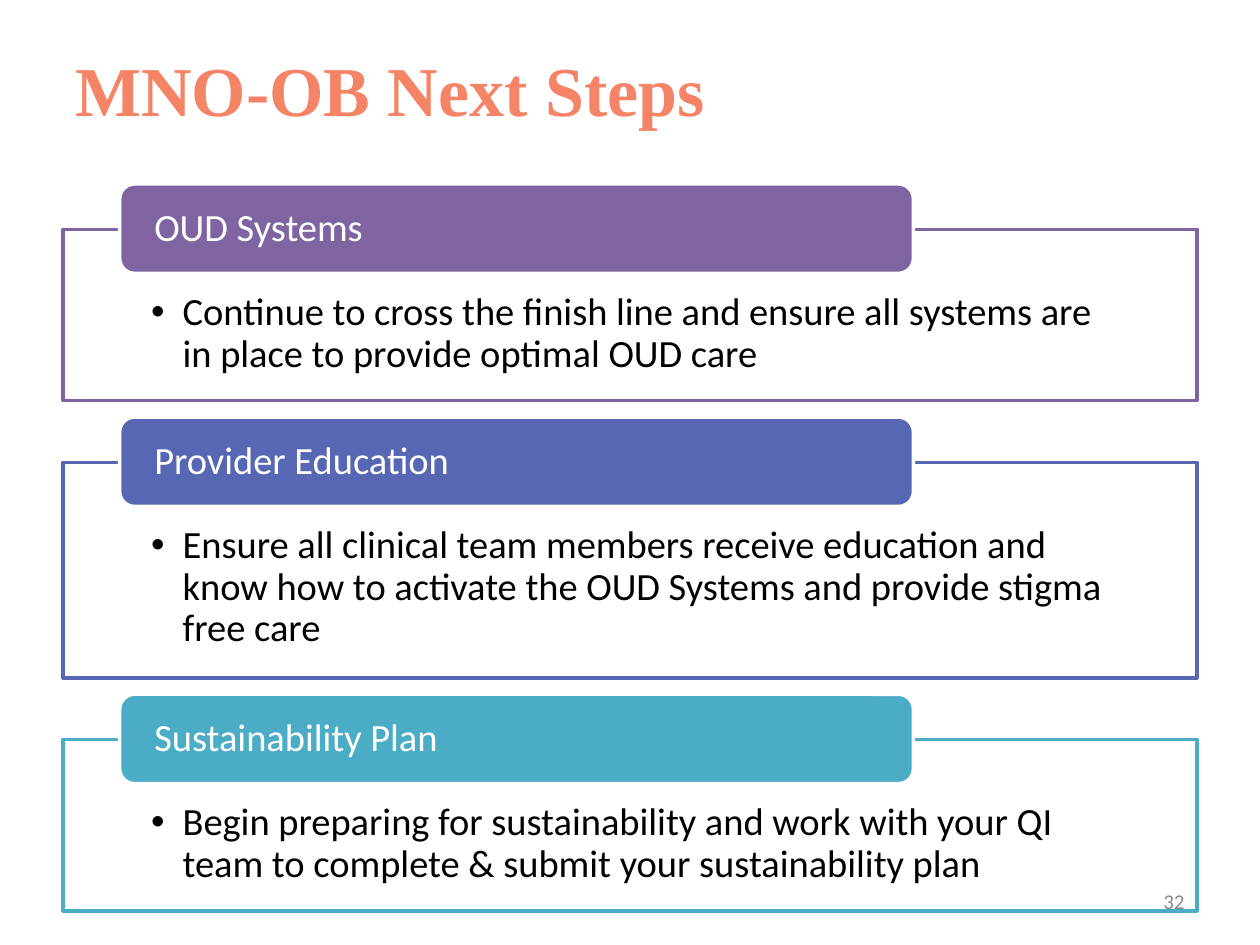
from dataclasses import dataclass

import lxml.etree
import pptx
import pptx.dml.color
import pptx.enum.shapes
import pptx.enum.text
import pptx.oxml.ns
import pptx.util

Inches = pptx.util.Inches
Align = pptx.enum.text.PP_ALIGN
Anchor = pptx.enum.text.MSO_ANCHOR
ShapeKind = pptx.enum.shapes.MSO_SHAPE


@dataclass(frozen=True)
class Theme:
    title_font: str = "Times New Roman"
    body_font: str = "Calibri"
    title_size: int = 40
    body_size: int = 22
    number_size: int = 12
    line_width: int = 2
    title_color: str = "F58466"
    text_color: str = "000000"
    number_color: str = "898989"
    white: str = "FFFFFF"


@dataclass(frozen=True)
class Step:
    label: str
    detail: str
    color: str
    panel_height: float


@dataclass(frozen=True)
class TextStyle:
    font: str
    size: int
    color: str
    bold: bool = False
    align: Align = Align.LEFT
    anchor: Anchor = Anchor.MIDDLE
    margins: tuple[float, float, float, float] = (0.1, 0.05, 0.1, 0.05)
    line_spacing: float = 1.0


THEME = Theme()
TITLE_STYLE = TextStyle(THEME.title_font, THEME.title_size, THEME.title_color, bold=True)
NUMBER_STYLE = TextStyle(
    THEME.body_font, THEME.number_size, THEME.number_color, align=Align.RIGHT
)
LABEL_STYLE = TextStyle(
    THEME.body_font, THEME.body_size, THEME.white,
    margins=(0.24, 0, 0.24, 0), line_spacing=0.9,
)
DETAIL_STYLE = TextStyle(
    THEME.body_font, THEME.body_size, THEME.text_color,
    anchor=Anchor.TOP, margins=(0.7, 0.5, 0.7, 0.17), line_spacing=0.9,
)

STEPS = [
    Step(
        "OUD Systems",
        "Continue to cross the finish line and ensure all systems are in place "
        "to provide optimal OUD care",
        "8064A2", 1.36,
    ),
    Step(
        "Provider Education",
        "Ensure all clinical team members receive education and know how to "
        "activate the OUD Systems and provide stigma free care",
        "5767B4", 1.71,
    ),
    Step(
        "Sustainability Plan",
        "Begin preparing for sustainability and work with your QI team to "
        "complete & submit your sustainability plan",
        "4BACC6", 1.36,
    ),
]
FIRST_TOP = 1.46
LABEL_HEIGHT = 0.71
LABEL_OVERHANG = 0.36
STEP_GAP = 0.13


def rgb(color: str) -> pptx.dml.color.RGBColor:
    return pptx.dml.color.RGBColor.from_string(color)


def add_bullet(paragraph) -> None:
    properties = paragraph._p.get_or_add_pPr()
    properties.set("marL", str(Inches(0.25)))
    properties.set("indent", str(Inches(-0.25)))
    for tag, name, value in (("a:buFont", "typeface", "Arial"), ("a:buChar", "char", "•")):
        element = lxml.etree.SubElement(properties, pptx.oxml.ns.qn(tag))
        element.set(name, value)


def write_text(shape, text: str, style: TextStyle, bulleted: bool = False) -> None:
    frame = shape.text_frame
    frame.text = text
    frame.word_wrap = True
    frame.vertical_anchor = style.anchor
    left, top, right, bottom = style.margins
    frame.margin_left, frame.margin_top = Inches(left), Inches(top)
    frame.margin_right, frame.margin_bottom = Inches(right), Inches(bottom)
    paragraph = frame.paragraphs[0]
    if bulleted:
        add_bullet(paragraph)
    paragraph.alignment = style.align
    paragraph.line_spacing = style.line_spacing
    font = paragraph.runs[0].font
    font.name = style.font
    font.size = pptx.util.Pt(style.size)
    font.bold = style.bold
    font.color.rgb = rgb(style.color)


def add_text_box(
    slide, text: str, style: TextStyle,
    left: float, top: float, width: float, height: float,
) -> None:
    box = slide.shapes.add_textbox(Inches(left), Inches(top), Inches(width), Inches(height))
    write_text(box, text, style)


def add_block(
    slide, kind: ShapeKind, fill: str, line: str,
    left: float, top: float, width: float, height: float,
):
    shape = slide.shapes.add_shape(
        kind, Inches(left), Inches(top), Inches(width), Inches(height)
    )
    shape.shadow.inherit = False
    shape.fill.solid()
    shape.fill.fore_color.rgb = rgb(fill)
    shape.line.color.rgb = rgb(line)
    shape.line.width = pptx.util.Pt(THEME.line_width)
    return shape


def add_step(slide, step: Step, top: float) -> float:
    panel_top = top + LABEL_OVERHANG
    panel = add_block(
        slide, ShapeKind.RECTANGLE, THEME.white, step.color,
        0.5, panel_top, 9, step.panel_height,
    )
    write_text(panel, step.detail, DETAIL_STYLE, bulleted=True)
    label = add_block(
        slide, ShapeKind.ROUNDED_RECTANGLE, step.color, THEME.white,
        0.95, top, 6.3, LABEL_HEIGHT,
    )
    write_text(label, step.label, LABEL_STYLE)
    return panel_top + step.panel_height + STEP_GAP


def main() -> None:
    presentation = pptx.Presentation()
    presentation.slide_width = Inches(10)
    presentation.slide_height = Inches(7.5)
    slide = presentation.slides.add_slide(presentation.slide_layouts[6])
    add_text_box(slide, "MNO-OB Next Steps", TITLE_STYLE, 0.5, 0.08, 9, 1.25)
    top = FIRST_TOP
    for step in STEPS:
        top = add_step(slide, step, top)
    add_text_box(slide, "32", NUMBER_STYLE, 7.17, 6.95, 2.33, 0.4)
    presentation.save("out.pptx")


if __name__ == "__main__":
    main()
